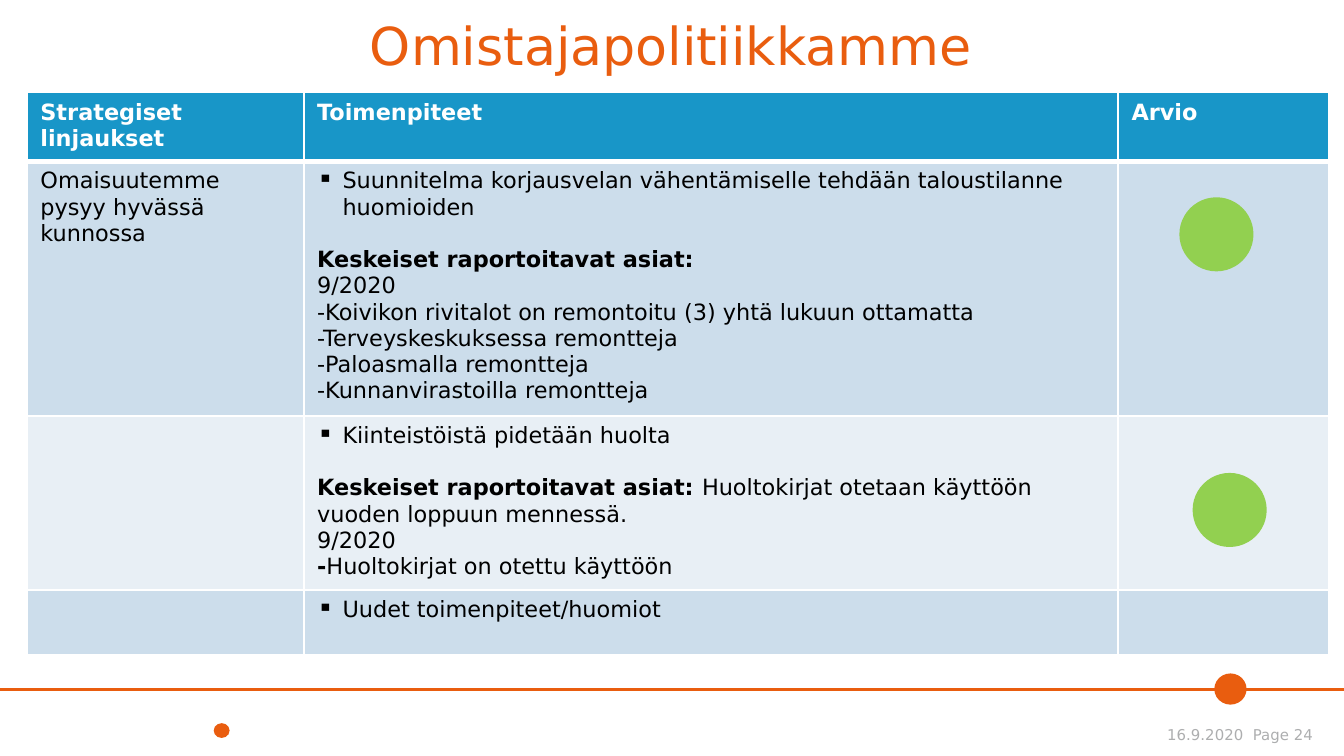
from dataclasses import dataclass

from lxml.etree import SubElement
from pptx import Presentation
from pptx.dml.color import RGBColor
from pptx.enum.shapes import MSO_CONNECTOR as Line, MSO_SHAPE as Shape
from pptx.enum.text import MSO_ANCHOR as Anchor, PP_ALIGN as Align
from pptx.oxml.ns import qn
from pptx.util import Cm, Pt

FONT = "DejaVu Sans"
ORANGE = RGBColor(0xE9, 0x5D, 0x0F)
GREEN = RGBColor(0x92, 0xD0, 0x50)
BLUE = RGBColor(0x18, 0x96, 0xC8)
BAND = RGBColor(0xCC, 0xDD, 0xEB)
PALE = RGBColor(0xE8, 0xEF, 0xF5)
GREY = RGBColor(0xAD, 0xAE, 0xAF)
WHITE = RGBColor(0xFF, 0xFF, 0xFF)
BLACK = RGBColor(0, 0, 0)


@dataclass
class Para:
    text: str = ""
    bold: str = ""  # bold words in front of the text
    bullet: bool = False
    gap: float = 0  # points before the paragraph


@dataclass
class Row:
    height: float
    fill: RGBColor
    cells: list[list[Para]]


@dataclass
class Dot:
    left: float
    top: float
    width: float
    height: float
    fill: RGBColor


TOPIC = "Keskeiset raportoitavat asiat:"
ROWS = [
    Row(1.3, BLUE, [[Para(bold="Strategiset linjaukset")],
                    [Para(bold="Toimenpiteet")], [Para(bold="Arvio")]]),
    Row(4.72, BAND, [
        [Para("Omaisuutemme pysyy hyvässä kunnossa")],
        [Para("Suunnitelma korjausvelan vähentämiselle tehdään "
              "taloustilanne huomioiden", bullet=True),
         Para(bold=TOPIC, gap=14),
         Para("9/2020"),
         Para("-Koivikon rivitalot on remontoitu (3) yhtä lukuun ottamatta"),
         Para("-Terveyskeskuksessa remontteja"),
         Para("-Paloasmalla remontteja"),
         Para("-Kunnanvirastoilla remontteja")],
        []]),
    Row(3.24, PALE, [
        [],
        [Para("Kiinteistöistä pidetään huolta", bullet=True),
         Para("Huoltokirjat otetaan käyttöön vuoden loppuun mennessä.",
              bold=TOPIC + " ", gap=14),
         Para("9/2020"),
         Para("Huoltokirjat on otettu käyttöön", bold="-")],
        []]),
    Row(1.22, BAND, [[], [Para("Uudet toimenpiteet/huomiot", bullet=True)], []]),
]
WIDTHS = [5.23, 15.39, 3.99]

FOOT = [Dot(22.95, 12.73, 0.61, 0.59, ORANGE), Dot(4.04, 13.67, 0.3, 0.28, ORANGE)]
MARKS = [Dot(22.29, 3.73, 1.4, 1.4, GREEN), Dot(22.54, 8.94, 1.4, 1.4, GREEN)]


def style(para, size: float, color: RGBColor) -> None:
    font = para.font
    font.name, font.size = FONT, Pt(size)
    font.color.rgb = color


def clear(frame) -> None:
    frame.margin_left = frame.margin_right = 0
    frame.margin_top = frame.margin_bottom = 0
    frame.vertical_anchor = Anchor.BOTTOM
    frame.word_wrap = True


def draw_dot(slide, dot: Dot) -> None:
    oval = slide.shapes.add_shape(Shape.OVAL, Cm(dot.left), Cm(dot.top),
                                  Cm(dot.width), Cm(dot.height))
    oval.shadow.inherit = False
    oval.fill.solid()
    oval.fill.fore_color.rgb = dot.fill
    oval.line.fill.background()


def edge(cell, head: bool) -> None:
    props = cell._tc.get_or_add_tcPr()
    for side in ("lnL", "lnR", "lnT", "lnB"):
        width = Pt(3 if head and side == "lnB" else 1)
        line = SubElement(props, qn(f"a:{side}"), w=str(width))
        fill = SubElement(line, qn("a:solidFill"))
        SubElement(fill, qn("a:srgbClr"), val=str(WHITE))


def write(para, item: Para, color: RGBColor) -> None:
    if item.gap:
        para.space_before = Pt(item.gap)
    if item.bullet:
        props = para._p.get_or_add_pPr()
        indent = Cm(0.48)
        props.set("marL", str(indent))
        props.set("indent", str(-indent))
        SubElement(props, qn("a:buChar"), char="▪")
    style(para, 12, color)
    for text, bold in ((item.bold, True), (item.text, False)):
        if text:
            run = para.add_run()
            run.text = text
            run.font.bold = bold


def draw_table(slide) -> None:
    tall = sum(row.height for row in ROWS)
    table = slide.shapes.add_table(len(ROWS), len(WIDTHS), Cm(0.51), Cm(1.75),
                                   Cm(sum(WIDTHS)), Cm(tall)).table
    for col, width in zip(table.columns, WIDTHS):
        col.width = Cm(width)
    for r, row in enumerate(ROWS):
        table.rows[r].height = Cm(row.height)
        for c, items in enumerate(row.cells):
            cell = table.cell(r, c)
            edge(cell, r == 0)
            cell.fill.solid()
            cell.fill.fore_color.rgb = row.fill
            frame = cell.text_frame
            for i, item in enumerate(items):
                para = frame.add_paragraph() if i else frame.paragraphs[0]
                write(para, item, BLACK if r else WHITE)


def main() -> None:
    deck = Presentation()
    deck.slide_width, deck.slide_height = Cm(25.4), Cm(14.29)
    slide = deck.slides.add_slide(deck.slide_layouts[5])

    # Footer line, dots and page text
    rule = slide.shapes.add_connector(Line.STRAIGHT, 0, Cm(13.03), Cm(25.4), Cm(13.03))
    rule.line.color.rgb = ORANGE
    rule.line.width = Pt(1.5)
    SubElement(rule._element.spPr, qn("a:effectLst"))
    for dot in FOOT:
        draw_dot(slide, dot)
    page = slide.shapes.add_textbox(Cm(15.98), Cm(13.54), Cm(8.84), Cm(0.51))
    clear(page.text_frame)
    para = page.text_frame.paragraphs[0]
    para.text = "16.9.2020  Page 24"
    para.alignment = Align.RIGHT
    style(para, 8, GREY)

    # Title
    title = slide.shapes.title
    title.left, title.top = Cm(2.11), Cm(-0.25)
    title.width, title.height = Cm(21.13), Cm(1.7)
    clear(title.text_frame)
    para = title.text_frame.paragraphs[0]
    para.text = "Omistajapolitiikkamme"
    para.alignment = Align.CENTER
    para.line_spacing = 0.9
    style(para, 28, ORANGE)

    # Table and its rating marks
    draw_table(slide)
    for dot in MARKS:
        draw_dot(slide, dot)

    deck.save("out.pptx")


if __name__ == "__main__":
    main()
